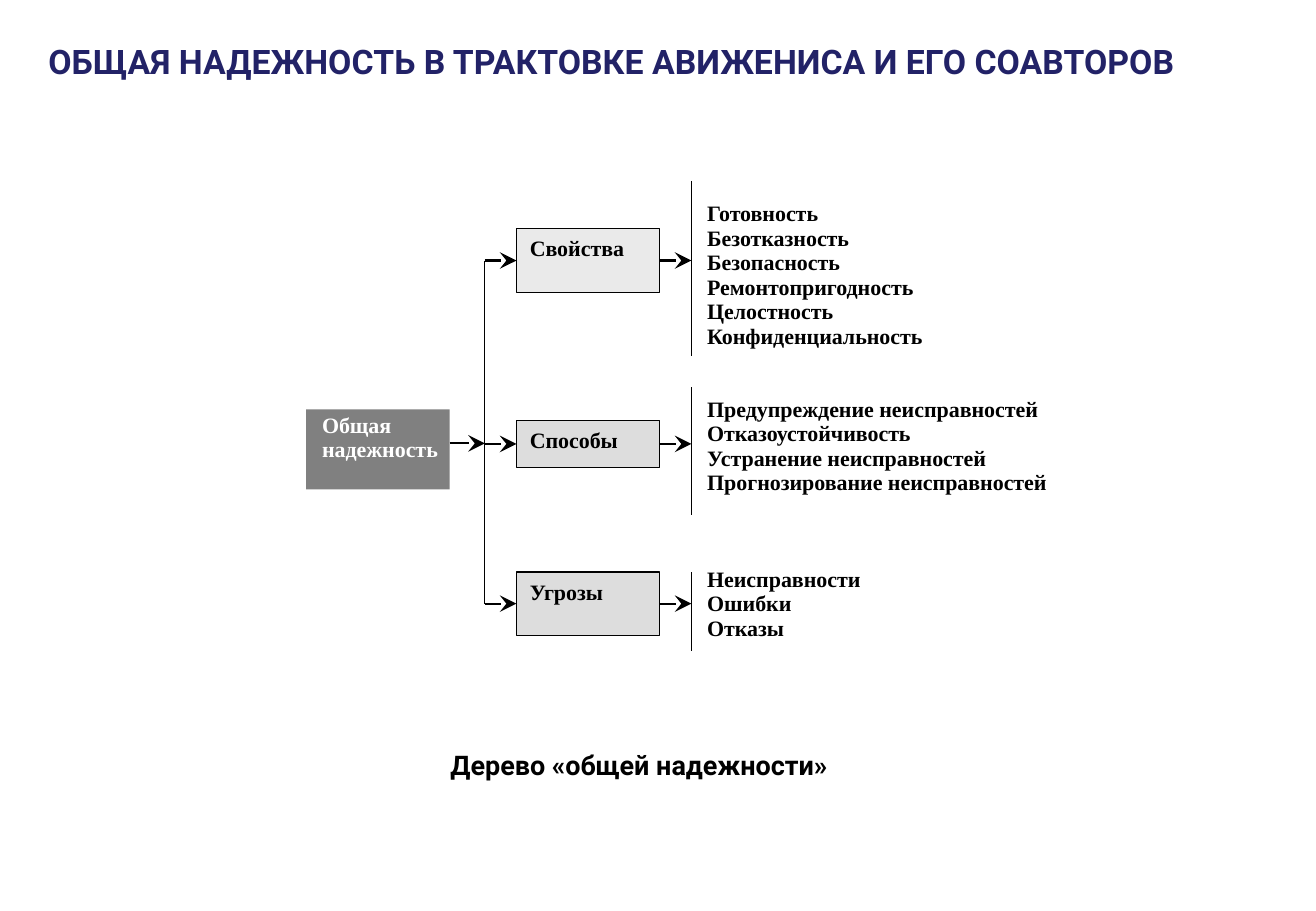
from lxml import etree
from pptx import Presentation
from pptx.dml.color import RGBColor
from pptx.enum import shapes, text
from pptx.oxml import ns
from pptx.util import Inches, Pt

BLACK = RGBColor(0x00, 0x00, 0x00)
WHITE = RGBColor(0xFF, 0xFF, 0xFF)
NAVY = RGBColor(0x22, 0x22, 0x67)
ROOT_GRAY = RGBColor(0x80, 0x80, 0x80)
PALE_GRAY = RGBColor(0xEA, 0xEA, 0xEA)
LIGHT_GRAY = RGBColor(0xDD, 0xDD, 0xDD)

TITLE = "ОБЩАЯ НАДЕЖНОСТЬ В ТРАКТОВКЕ АВИЖЕНИСА И ЕГО СОАВТОРОВ"
CAPTION = "Дерево «общей надежности»"
ROOT = ["Общая", "надежность"]
# name, fill, box top and height, bar top and bottom, list top, items
BRANCHES = [
    ("Свойства", PALE_GRAY, (1.88, 0.53), (1.49, 2.93), 1.66,
     ["Готовность", "Безотказность", "Безопасность",
      "Ремонтопригодность", "Целостность", "Конфиденциальность"]),
    ("Способы", LIGHT_GRAY, (3.46, 0.39), (3.19, 4.24), 3.27,
     ["Предупреждение неисправностей", "Отказоустойчивость",
      "Устранение неисправностей", "Прогнозирование неисправностей"]),
    ("Угрозы", LIGHT_GRAY, (4.71, 0.52), (4.71, 5.36), 4.67,
     ["Неисправности", "Ошибки", "Отказы"]),
]

BOX_WIDTH = 1.18
ROOT_LEFT, ROOT_TOP, ROOT_HEIGHT = 2.52, 3.37, 0.66
TRUNK_X, BOX_LEFT, BAR_X, LIST_LEFT = 3.99, 4.25, 5.69, 5.82
ROOT_ARROW_Y = 3.65
LINE_PITCH = 14.5

prs = Presentation()
prs.slide_width, prs.slide_height = Inches(10.83), Inches(7.5)
slide = prs.slides.add_slide(prs.slide_layouts[6])


def write(frame, lines, size, font, color, insets=(0.1, 0.05),
          align=text.PP_ALIGN.LEFT, pitch=None):
    frame.word_wrap = True
    frame.vertical_anchor = text.MSO_ANCHOR.TOP
    frame.margin_left, frame.margin_top = (Inches(inset) for inset in insets)
    frame.margin_right = frame.margin_bottom = 0
    for index, line in enumerate(lines):
        paragraph = frame.paragraphs[0] if index == 0 else frame.add_paragraph()
        paragraph.alignment = align
        if pitch:
            paragraph.line_spacing = Pt(pitch)
        run = paragraph.add_run()
        run.text = line
        run.font.size, run.font.name, run.font.bold = Pt(size), font, True
        run.font.color.rgb = color


def add_label(left, top, width, height, lines, size, font, color, **layout):
    label = slide.shapes.add_textbox(*map(Inches, (left, top, width, height)))
    write(label.text_frame, lines, size, font, color, **layout)


def add_box(left, top, height, lines, fill, color, insets, outlined=True):
    box = slide.shapes.add_shape(shapes.MSO_SHAPE.RECTANGLE,
                                 *map(Inches, (left, top, BOX_WIDTH, height)))
    box.shadow.inherit = False
    box.fill.solid()
    box.fill.fore_color.rgb = fill
    if outlined:
        box.line.color.rgb = BLACK
        box.line.width = Pt(0.75)
    else:
        box.line.fill.background()
    write(box.text_frame, lines, 13, "Times New Roman", color, insets,
          pitch=LINE_PITCH)
    return box


def add_line(x1, y1, x2, y2, arrow=False):
    line = slide.shapes.add_connector(shapes.MSO_CONNECTOR.STRAIGHT,
                                      *map(Inches, (x1, y1, x2, y2)))
    line.line.color.rgb = BLACK
    line.line.width = Pt(1.25 if arrow else 0.75)
    properties = line.line._get_or_add_ln()
    if arrow:
        etree.SubElement(properties, ns.qn("a:tailEnd"),
                         type="stealth", w="lg", len="lg")
    etree.SubElement(properties.getparent(), ns.qn("a:effectLst"))
    return line


add_label(0.3, 0.29, 9.84, 0.44, [TITLE], 20, "Roboto", NAVY)
add_label(2.5, 6.11, 5.42, 0.59, [CAPTION], 16, "Roboto", BLACK,
          align=text.PP_ALIGN.CENTER)

add_box(ROOT_LEFT, ROOT_TOP, ROOT_HEIGHT, ROOT, ROOT_GRAY, WHITE,
        (0.13, 0.03), outlined=False)
add_line(ROOT_LEFT + BOX_WIDTH, ROOT_ARROW_Y, TRUNK_X, ROOT_ARROW_Y, arrow=True)

branch_middles = []
for name, fill, (top, height), (bar_top, bar_bottom), list_top, items in BRANCHES:
    middle = top + height / 2
    branch_middles.append(middle)
    box = add_box(BOX_LEFT, top, height, [name], fill, BLACK, (0.11, 0.07))
    add_line(TRUNK_X, middle, BOX_LEFT, middle, arrow=True).end_connect(box, 1)
    add_line(BOX_LEFT + BOX_WIDTH, middle, BAR_X, middle,
             arrow=True).begin_connect(box, 3)
    add_line(BAR_X, bar_top, BAR_X, bar_bottom)
    add_label(LIST_LEFT, list_top, 3.2, len(items) * LINE_PITCH / 72, items,
              13, "Times New Roman", BLACK, insets=(0, 0), pitch=LINE_PITCH)

add_line(TRUNK_X, branch_middles[0], TRUNK_X, branch_middles[-1])

prs.save("out.pptx")
